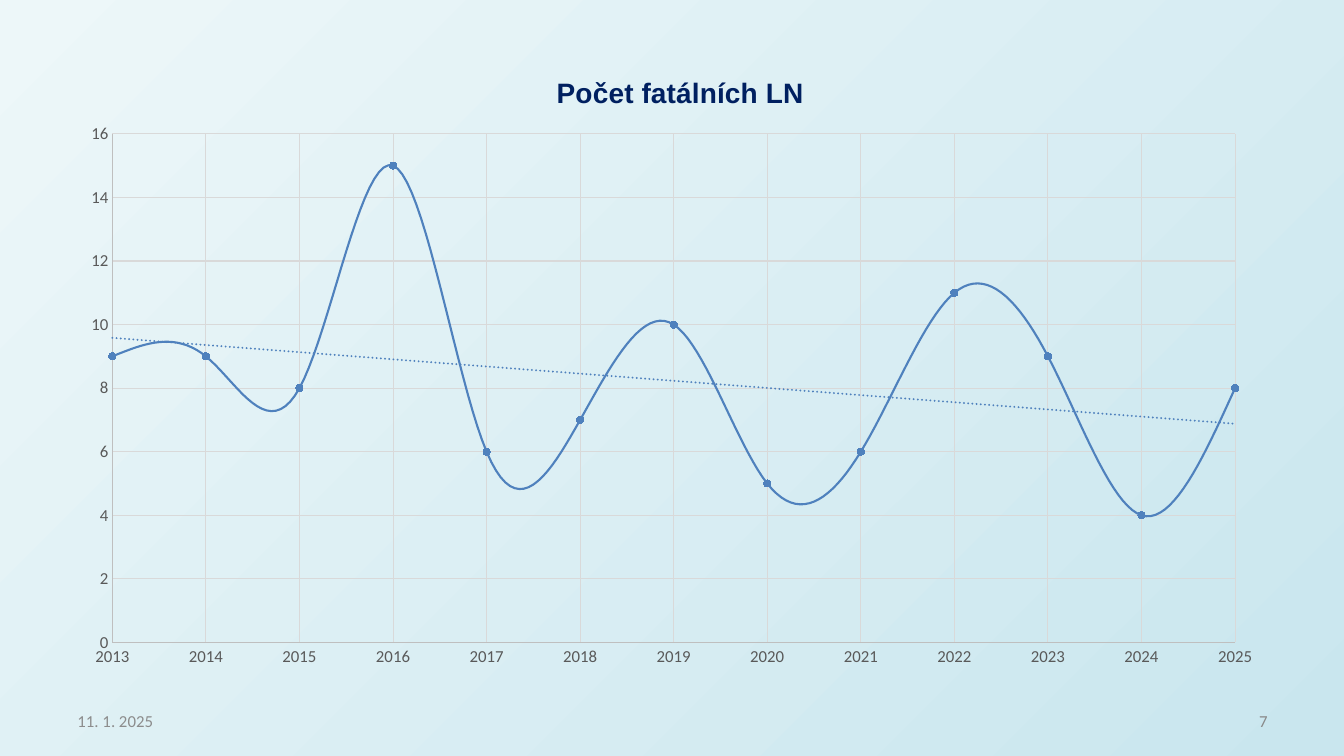
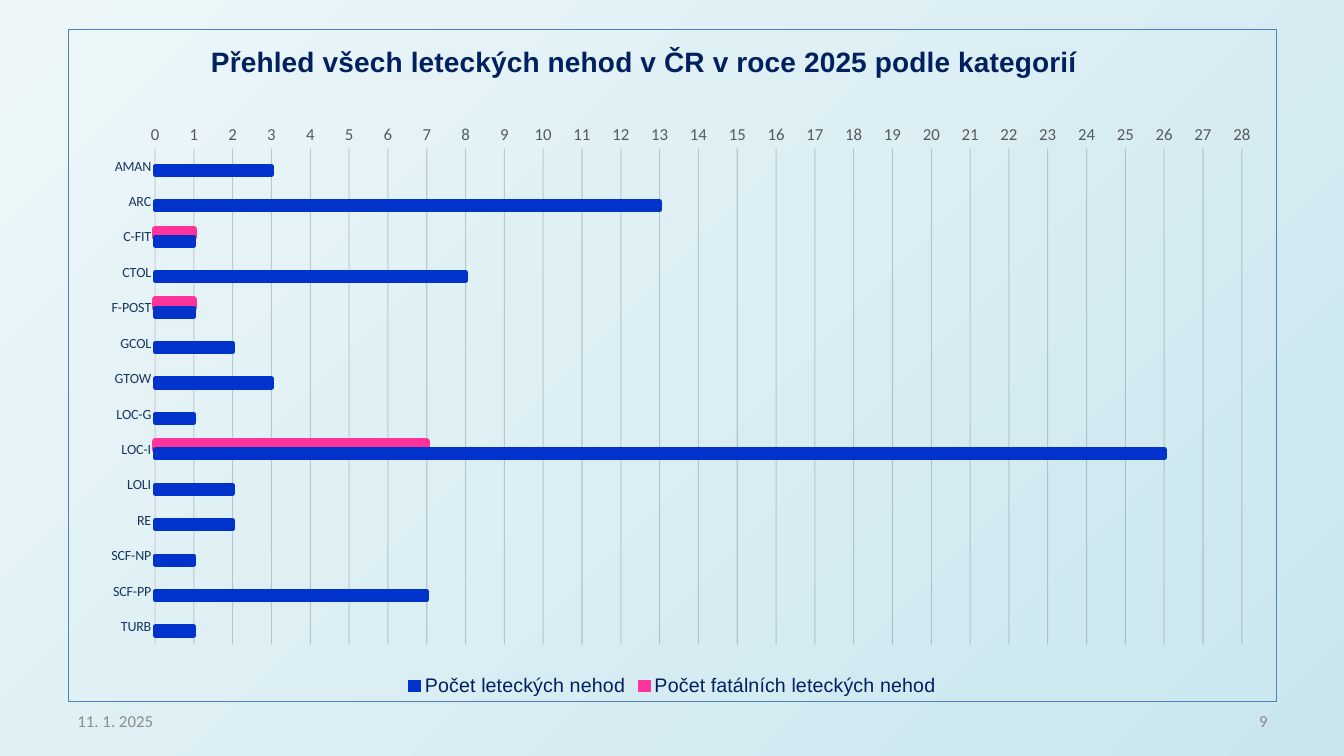
from pptx import Presentation
from pptx.chart.data import CategoryChartData, XyChartData
from pptx.dml.color import RGBColor
from pptx.enum.chart import XL_CHART_TYPE, XL_LEGEND_POSITION, XL_MARKER_STYLE, XL_TICK_MARK
from pptx.enum.text import MSO_ANCHOR, PP_ALIGN
from pptx.oxml import parse_xml
from pptx.oxml.ns import nsdecls, qn
from pptx.util import Inches, Pt

BG_LIGHT = RGBColor(0xED, 0xF7, 0xF9)
BG_DARK = RGBColor(0xC9, 0xE6, 0xEE)
NAVY = RGBColor(0x00, 0x20, 0x60)
LABEL_NAVY = RGBColor(0x17, 0x37, 0x5E)
STEEL = RGBColor(0x4F, 0x81, 0xBD)
BLUE = RGBColor(0x00, 0x33, 0xCC)
PINK = RGBColor(0xFF, 0x33, 0x99)
BLACK = RGBColor(0x00, 0x00, 0x00)
DATE_GREY = RGBColor(0x8C, 0x8C, 0x8C)
NUMBER_GREY = RGBColor(0x89, 0x89, 0x89)
TEXT_GREY = RGBColor(0x59, 0x59, 0x59)
AXIS_GREY = RGBColor(0xBF, 0xBF, 0xBF)
GRID_GREY = RGBColor(0xD9, 0xD9, 0xD9)

HEADING_FONT = "Arial"
BODY_FONT = "Calibri"
DATE = "11. 1. 2025"

YEARS = range(2013, 2026)
FATAL_BY_YEAR = (9, 9, 8, 15, 6, 7, 10, 5, 6, 11, 9, 4, 8)
ACCIDENTS = {
    "AMAN": 3, "ARC": 13, "C-FIT": 1, "CTOL": 8, "F-POST": 1, "GCOL": 2, "GTOW": 3,
    "LOC-G": 1, "LOC-I": 26, "LOLI": 2, "RE": 2, "SCF-NP": 1, "SCF-PP": 7, "TURB": 1,
}
FATAL_ACCIDENTS = {"C-FIT": 1, "F-POST": 1, "LOC-I": 7}


def set_font(font, size, color, name=BODY_FONT, bold=False):
    font.size, font.name, font.bold = Pt(size), name, bold
    font.color.rgb = color


def set_line(line, color, width=0.75):
    line.color.rgb = color
    line.width = Pt(width)


def set_layout(parent, index, x, y, w=None, h=None):
    """Place a chart part by fractions of the chart; a size means the inner plot."""
    for old in parent.findall(qn("c:layout")):
        parent.remove(old)
    target = '<c:layoutTarget val="inner"/>' if w else ""
    size = f'<c:w val="{w}"/><c:h val="{h}"/>' if w else ""
    parent.insert(index, parse_xml(
        f'<c:layout {nsdecls("c")}><c:manualLayout>{target}'
        f'<c:xMode val="edge"/><c:yMode val="edge"/>'
        f'<c:x val="{x}"/><c:y val="{y}"/>{size}</c:manualLayout></c:layout>'))


def area_format(border=None):
    """Return chart area properties: no fill and an optional border."""
    fill = f'<a:solidFill><a:srgbClr val="{border}"/></a:solidFill>' if border else "<a:noFill/>"
    return parse_xml(f'<c:spPr {nsdecls("c", "a")}><a:noFill/>'
                     f'<a:ln w="{Pt(0.75)}">{fill}</a:ln></c:spPr>')


def add_trendline(series, color):
    x_values = series._element.find(qn("c:xVal"))
    x_values.addprevious(parse_xml(
        f'<c:trendline {nsdecls("c", "a")}><c:spPr><a:ln w="{Pt(1.5)}" cap="rnd">'
        f'<a:solidFill><a:srgbClr val="{color}"/></a:solidFill><a:prstDash val="sysDot"/>'
        '</a:ln></c:spPr><c:trendlineType val="linear"/><c:dispRSqr val="0"/>'
        '<c:dispEq val="0"/></c:trendline>'))


class Deck:
    def __init__(self):
        self.prs = Presentation()
        self.prs.slide_width, self.prs.slide_height = Inches(13.33), Inches(7.5)
        self.slide = None

    def add_slide(self, number):
        self.slide = self.prs.slides.add_slide(self.prs.slide_layouts[6])
        fill = self.slide.background.fill
        fill.gradient()
        fill.gradient_angle = 315
        for stop, color in zip(fill.gradient_stops, (BG_LIGHT, BG_DARK)):
            stop.color.rgb = color
        self.add_footer(0.67, DATE, DATE_GREY, PP_ALIGN.LEFT)
        self.add_footer(9.56, str(number), NUMBER_GREY, PP_ALIGN.RIGHT)

    def add_footer(self, left, text, color, align):
        box = self.slide.shapes.add_textbox(Inches(left), Inches(6.95), Inches(3.11), Inches(0.4))
        tf = box.text_frame
        tf.word_wrap = True
        tf.vertical_anchor = MSO_ANCHOR.MIDDLE
        p = tf.paragraphs[0]
        p.text, p.alignment = text, align
        set_font(p.font, 12, color)

    def add_chart(self, kind, data, top, height, title, title_at, plot_at, border=None):
        chart = self.slide.shapes.add_chart(
            kind, Inches(0.67), Inches(top), Inches(12), Inches(height), data).chart
        set_font(chart.font, 10, BLACK)
        chart.has_legend = False
        chart.has_title = True
        p = chart.chart_title.text_frame.paragraphs[0]
        p.text = title
        set_font(p.font, 20, NAVY, HEADING_FONT, bold=True)
        set_layout(chart.chart_title._element, 1, *title_at)

        chart_part = chart._chartSpace.find(qn("c:chart"))
        chart_part.addnext(area_format(border))
        plot_area = chart_part.find(qn("c:plotArea"))
        set_layout(plot_area, 0, *plot_at)
        plot_area.append(area_format())
        chart.plots[0].vary_by_categories = False
        return chart

    def style_axis(self, axis, size=12, color=TEXT_GREY, line=None, grid=None,
                   scale=None, step=None):
        axis.major_tick_mark = axis.minor_tick_mark = XL_TICK_MARK.NONE
        set_font(axis.tick_labels.font, size, color)
        if line is None:
            axis.format.line.fill.background()
        else:
            set_line(axis.format.line, line)
        axis.has_major_gridlines = grid is not None
        if grid is not None:
            set_line(axis.major_gridlines.format.line, grid)
        if scale:
            axis.minimum_scale, axis.maximum_scale = scale
            axis.major_unit = step

    def add_yearly_chart(self):
        data = XyChartData()
        points = data.add_series("Series 1")
        for year, count in zip(YEARS, FATAL_BY_YEAR):
            points.add_data_point(year, count)
        chart = self.add_chart(
            XL_CHART_TYPE.XY_SCATTER_SMOOTH, data, 0.44, 6.3, "Počet fatálních LN",
            (0.4, 0.04), (0.037, 0.141, 0.928, 0.801))
        grey = {"line": AXIS_GREY, "grid": GRID_GREY}
        self.style_axis(chart.category_axis, scale=(YEARS[0], YEARS[-1]), step=1, **grey)
        self.style_axis(chart.value_axis, scale=(0, 16), step=2, **grey)

        series = chart.plots[0].series[0]
        series._element.get_or_add_smooth().val = True
        set_line(series.format.line, STEEL, 1.5)
        marker = series.marker
        marker.style, marker.size = XL_MARKER_STYLE.CIRCLE, 5
        marker.format.fill.solid()
        marker.format.fill.fore_color.rgb = STEEL
        set_line(marker.format.line, STEEL)
        add_trendline(series, STEEL)

    def add_category_chart(self):
        data = CategoryChartData()
        data.categories = list(ACCIDENTS)
        data.add_series("Počet fatálních leteckých nehod",
                        [FATAL_ACCIDENTS.get(name) for name in ACCIDENTS])
        data.add_series("Počet leteckých nehod", list(ACCIDENTS.values()))
        chart = self.add_chart(
            XL_CHART_TYPE.BAR_CLUSTERED, data, 0.29, 6.67,
            "Přehled všech leteckých nehod v ČR v roce 2025 podle kategorií",
            (0.114, 0.014), (0.072, 0.177, 0.899, 0.739), border=STEEL)
        self.style_axis(chart.category_axis, 10, LABEL_NAVY, line=GRID_GREY)
        chart.category_axis.reverse_order = True
        self.style_axis(chart.value_axis, grid=BLACK, scale=(0, 28), step=1)
        grid_color = chart.value_axis._element.xpath("c:majorGridlines//a:srgbClr")[0]
        grid_color.append(parse_xml(f'<a:alpha {nsdecls("a")} val="17000"/>'))

        plot = chart.plots[0]
        plot.gap_width = 230
        for series, color, width in zip(plot.series, (PINK, BLUE), (4.75, 3.5)):
            series.invert_if_negative = False
            series.format.fill.solid()
            series.format.fill.fore_color.rgb = color
            set_line(series.format.line, color, width)

        chart.has_legend = True
        chart.legend.position = XL_LEGEND_POSITION.BOTTOM
        chart.legend.include_in_layout = False
        set_font(chart.legend.font, 14, NAVY, HEADING_FONT)


def main():
    deck = Deck()
    deck.add_slide(7)
    deck.add_yearly_chart()
    deck.add_slide(9)
    deck.add_category_chart()
    deck.prs.save("out.pptx")


if __name__ == "__main__":
    main()
